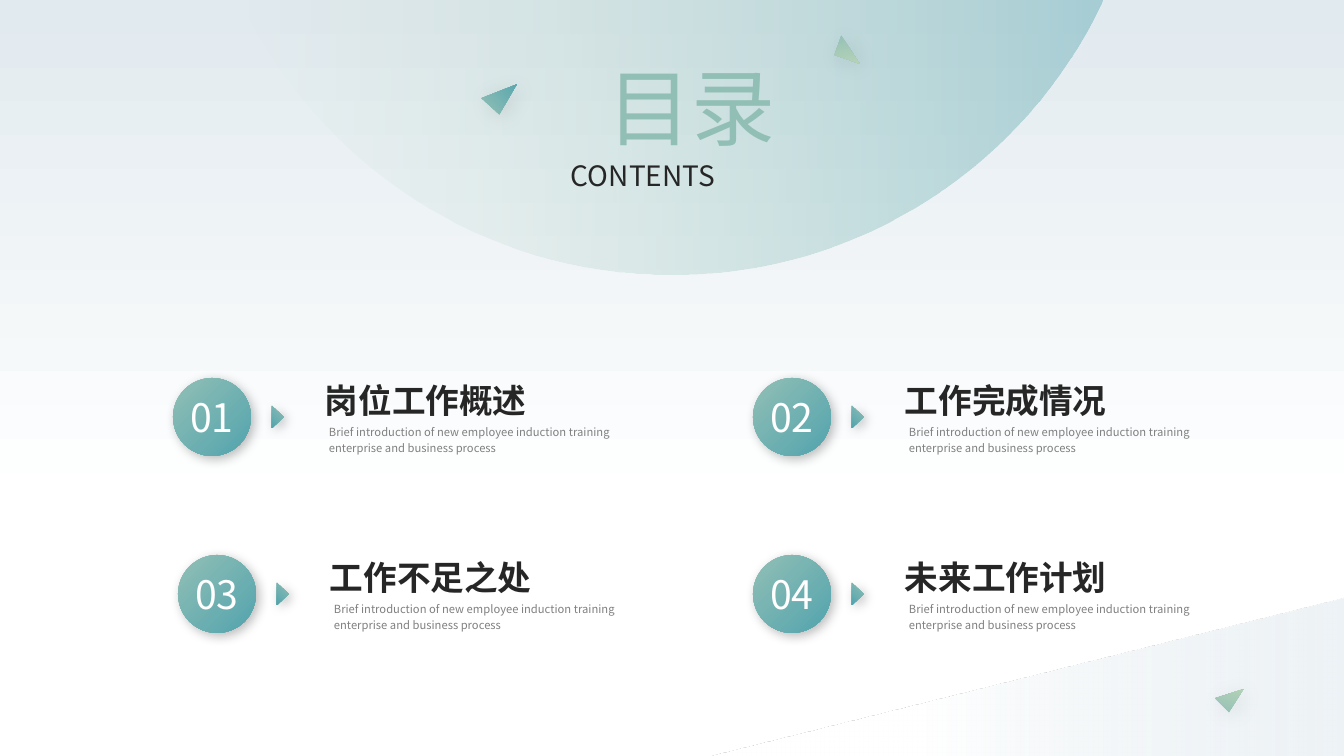
from lxml.etree import SubElement
from pptx import Presentation
from pptx.dml.color import RGBColor as Rgb
from pptx.enum.shapes import MSO_SHAPE as Shape
from pptx.enum.text import MSO_ANCHOR as Anchor, MSO_AUTO_SIZE as Fit, PP_ALIGN as Align
from pptx.oxml.ns import qn
from pptx.util import Pt

# Content
TITLE, SUB = "目录", "CONTENTS"
NOTE = "Brief introduction of new employee induction training enterprise and business process"
ITEMS = [  # number, heading, left, top
    ("01", "岗位工作概述", 173, 378),
    ("02", "工作完成情况", 753, 378),
    ("03", "工作不足之处", 178, 555),
    ("04", "未来工作计划", 753, 555),
]
COLORS = {
    "mist": "E1EAEF", "white": "FFFFFF", "sage": "92BFB5", "teal": "52A4AE",
    "leaf": "B6D3B7", "sky": "77B6BF", "ink": "262626", "gray": "808080",
}
FONT = "Noto Sans CJK SC"
FADE = [(0, "mist"), (67, "white")]
DEEP = [(0, "sage"), (100, "teal")]
SOFT = [(0, "sage"), (92, "leaf")]
DOME = [  # top edge, then two curves of three points each
    (241, 1), (1102, 1), (1100, 6),
    (1023, 165), (860, 275), (671, 275),
    (483, 275), (321, 165), (243, 6),
]
CHIPS = [  # corners before turning, gradient stops, turn
    ([(487, 107), (485, 83), (520, 97)], [(3, "sage"), (92, "teal")], 317),
    ([(830, 52), (861, 39), (848, 62)], SOFT, 79.5),
    ([(1215, 703), (1225, 686), (1241, 711)], SOFT, 285),
]
WIDE, HIGH = 1344, 756
PX = 914400 / 100.8


def emu(*vals):
    return [round(v * PX) for v in vals]


def blend(fill, stops, angle):
    """Two-stop gradient; the angle runs anticlockwise."""
    fill.gradient()
    fill.gradient_angle = angle
    for stop, (pos, name) in zip(fill.gradient_stops, stops):
        stop.position = pos / 100
        stop.color.rgb = Rgb.from_string(COLORS[name])


def paint(shape, stops, angle, alphas=()):
    blend(shape.fill, stops, angle)
    shape.line.fill.background()
    shape.shadow.inherit = False
    tints = shape._element.spPr.iter(qn("a:srgbClr"))
    for tint, alpha in zip(tints, alphas):
        SubElement(tint, qn("a:alpha"), val=str(alpha * 1000))


def shade(shape, alpha, blur):
    effects = shape._element.spPr.find(qn("a:effectLst"))
    cast = SubElement(effects, qn("a:outerShdw"), blurRad=str(Pt(blur)), dist=str(Pt(3)),
                      dir="2700000", algn="tl", rotWithShape="0")
    tint = SubElement(cast, qn("a:srgbClr"), val="000000")
    SubElement(tint, qn("a:alpha"), val=str(alpha * 1000))


def write(box, text, size, color, align=Align.LEFT, wrap=True, bold=False, space=1.0):
    frame = box.text_frame
    frame.text = text
    frame.word_wrap = wrap
    frame.auto_size = Fit.NONE
    frame.vertical_anchor = Anchor.TOP
    para = frame.paragraphs[0]
    para.alignment, para.line_spacing = align, space
    font = para.runs[0].font
    font.size, font.bold, font.name = Pt(size), bold, FONT
    font.color.rgb = Rgb.from_string(COLORS[color])
    SubElement(font._element, qn("a:ea"), typeface=FONT)
    return font


def label(place, *args, **opts):
    box = shapes.add_textbox(*emu(*place))
    write(box, *args, **opts)
    return box


def outline(points):
    pen = shapes.build_freeform(*points[0], scale=PX)
    pen.add_line_segments(points[1:], close=True)
    return pen.convert_to_shape()


def curve(shape, first):
    """Turn the lines from the given one on into cubic curves."""
    lines = list(shape._element.iter(qn("a:lnTo")))[first:]
    for start in range(0, len(lines) - 2, 3):
        bend = lines[start].makeelement(qn("a:cubicBezTo"))
        lines[start].addprevious(bend)
        for line in lines[start:start + 3]:
            bend.append(line[0])
            line.getparent().remove(line)


deck = Presentation()
deck.slide_width, deck.slide_height = emu(WIDE, HIGH)
slide = deck.slides.add_slide(deck.slide_layouts[5])
shapes = slide.shapes

# Backdrop: border, page fade, corner wedge, dome
border, page = [shapes.add_shape(Shape.RECTANGLE, *emu(0, 0, WIDE, HIGH)) for _ in range(2)]
border.fill.background()
border.line.color.rgb = Rgb.from_string(COLORS["white"])
border.line.width = Pt(3)
border.shadow.inherit = False
paint(page, FADE, 270)
wedge = shapes.add_shape(Shape.ISOSCELES_TRIANGLE, *emu(704, 598, 642, 159))
wedge.adjustments[0] = 1
paint(wedge, FADE, 180, [57])
dome = outline(DOME)
curve(dome, 2)
paint(dome, [(0, "leaf"), (100, "sky")], 0, [0, 55])

# Title, lifted above the dome
title = shapes.title
title.left, title.top, title.width, title.height = emu(583, 50, 217, 112)
font = write(title, TITLE, 60, "sage", Align.CENTER)
blend(font.fill, DEEP, 315)
shapes._spTree.append(title._element)
sub = label((664, 50, 54, 260), SUB, 20, "ink", Align.JUSTIFY)
sub.rotation = 270
sub.text_frame._txBody.bodyPr.set("vert", "eaVert")

# Four entries
for num, head, x, y in ITEMS:
    label((x + 142, y - 3, 224, 50), head, 24, "ink", wrap=False, bold=True)
    label((x + 146, y + 40, 320, 42), NOTE, 8, "gray", space=1.2)
    disc = shapes.add_shape(Shape.OVAL, *emu(x, y, 78, 78))
    arrow = shapes.add_shape(Shape.ISOSCELES_TRIANGLE, *emu(x + 94, y + 33, 22, 12))
    arrow.rotation = 90
    for part in (disc, arrow):
        paint(part, DEEP, 315)
        shade(part, 25, 8)
    label((x + 8, y + 10, 62, 56), num, 28, "white", Align.CENTER, wrap=False)

# Floating chips
for corners, stops, turn in CHIPS:
    chip = outline(corners)
    chip.rotation = turn
    paint(chip, stops, 0)
    shade(chip, 10, 15)

deck.save("out.pptx")
